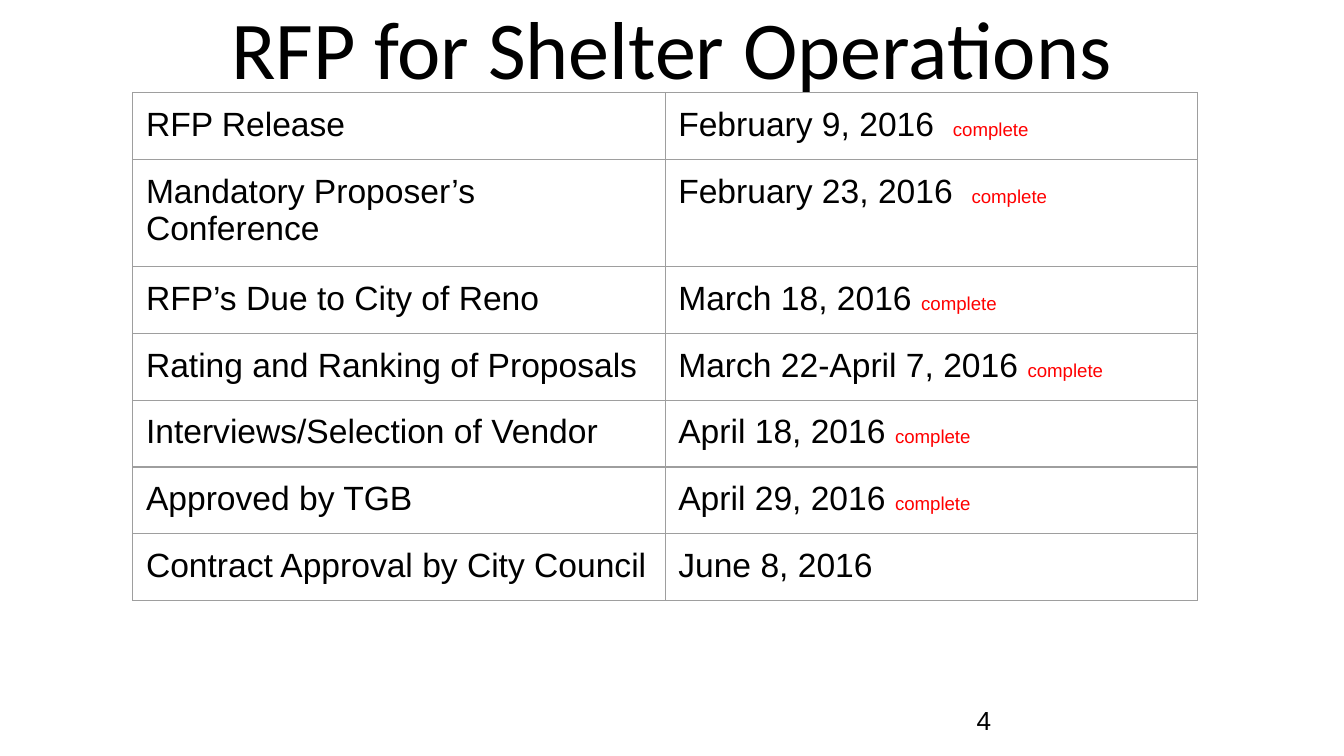
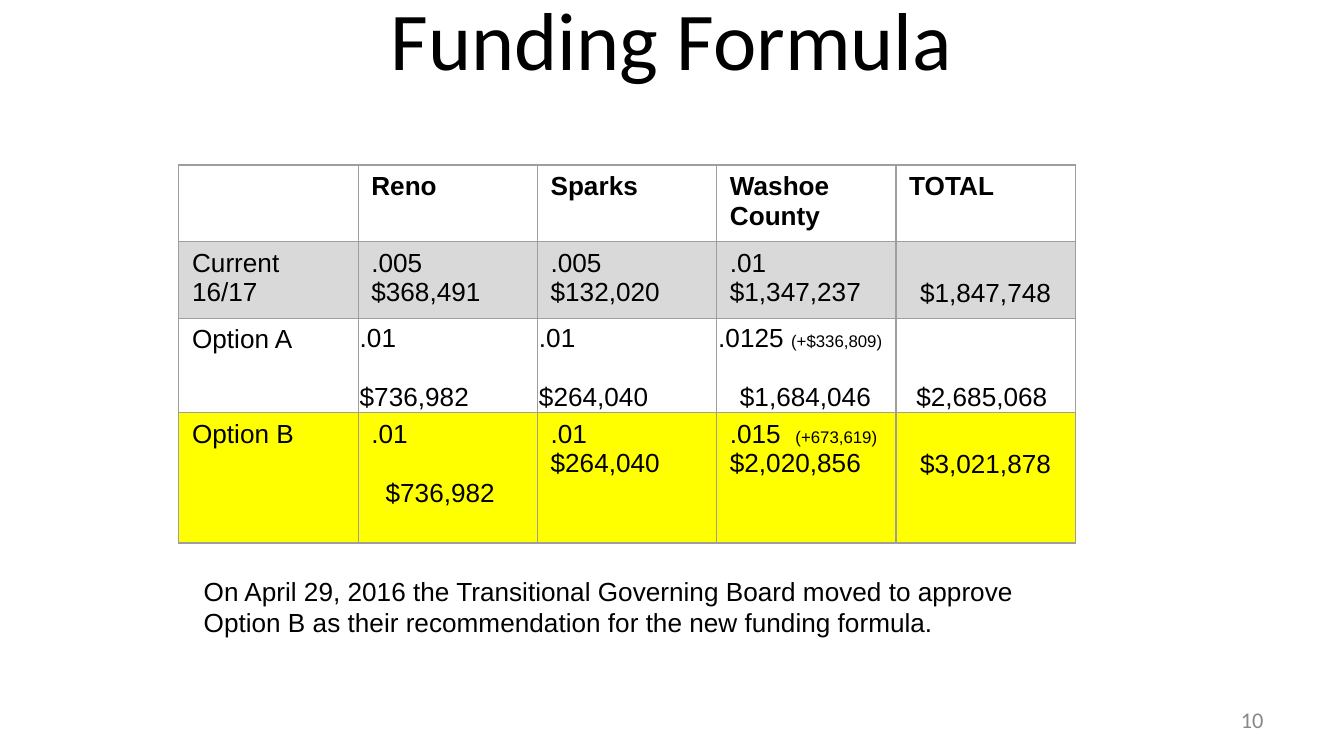
from dataclasses import dataclass

from lxml.etree import SubElement
from pptx import Presentation
from pptx.dml.color import RGBColor
from pptx.enum.text import MSO_ANCHOR, PP_ALIGN
from pptx.oxml import parse_xml
from pptx.oxml.ns import nsdecls, qn
from pptx.util import Cm, Pt


@dataclass(frozen=True)
class Theme:
    heading_font: str = "Calibri"
    body_font: str = "Arial"
    ink: str = "000000"
    muted: str = "888888"
    done: str = "FF0000"
    rule: str = "9E9E9E"
    current: str = "D9D9D9"
    chosen: str = "FFFF00"
    title: int = 44
    schedule: int = 18
    body: int = 14
    number: int = 12
    status: int = 10
    increase: int = 9
    rule_width: float = 0.75


@dataclass(frozen=True)
class Box:
    left: float
    top: float
    width: float
    height: float

    def lengths(self):
        return [Cm(v) for v in (self.left, self.top, self.width, self.height)]


@dataclass(frozen=True)
class Run:
    text: str
    size: int
    font: str
    color: str
    bold: bool = False


@dataclass(frozen=True)
class Line:
    runs: list
    align: PP_ALIGN = PP_ALIGN.LEFT
    before: float = 0
    indent: float = 0


@dataclass(frozen=True)
class Entry:
    """Content of one table cell; margins run left, top, right, bottom."""
    lines: list
    margins: tuple = (0.25, 0.13, 0.25, 0.13)
    anchor: MSO_ANCHOR = MSO_ANCHOR.TOP


THEME = Theme()
WIDE_MARGINS = (0.25,) * 4
TIGHT_MARGINS = (0.03, 0.03, 0.03, 0)
SECOND_LINE_MARGINS = (0.25, 0.7, 0.25, 0.13)
SKIPPED_LINE = 16


def body_run(text, size=THEME.body, color=THEME.ink, bold=False):
    return Run(text, size, THEME.body_font, color, bold)


def write_lines(frame, lines):
    for index, line in enumerate(lines):
        paragraph = frame.paragraphs[0] if index == 0 else frame.add_paragraph()
        paragraph.alignment = line.align
        if line.before:
            paragraph.space_before = Pt(line.before)
        if line.indent:
            paragraph._p.get_or_add_pPr().set("marL", str(Cm(line.indent)))
        for part in line.runs:
            run = paragraph.add_run()
            run.text = part.text
            run.font.name = part.font
            run.font.size = Pt(part.size)
            run.font.bold = part.bold
            run.font.color.rgb = RGBColor.from_string(part.color)


def add_text(slide, box, lines, anchor=MSO_ANCHOR.TOP, inset=0.13):
    frame = slide.shapes.add_textbox(*box.lengths()).text_frame
    frame.word_wrap = True
    frame.vertical_anchor = anchor
    frame.margin_left = frame.margin_right = Cm(0.25)
    frame.margin_top = frame.margin_bottom = Cm(inset)
    write_lines(frame, lines)


def add_title(slide, box, text):
    run = Run(text, THEME.title, THEME.heading_font, THEME.ink)
    add_text(slide, box, [Line([run], PP_ALIGN.CENTER)], MSO_ANCHOR.MIDDLE, 0.25)


def add_page_number(slide, run, align):
    box = Box(18.21, 13.23, 5.92, 0.76)
    add_text(slide, box, [Line([run], align)], MSO_ANCHOR.MIDDLE)


def draw_borders(cell):
    properties = cell._tc.get_or_add_tcPr()
    for index, side in enumerate(("lnL", "lnR", "lnT", "lnB")):
        border = parse_xml(f'<a:{side} {nsdecls("a")} w="{Pt(THEME.rule_width)}"/>')
        fill = SubElement(border, qn("a:solidFill"))
        SubElement(fill, qn("a:srgbClr")).set("val", THEME.rule)
        properties.insert(index, border)


def add_grid(slide, box, rows, heights, fills):
    """Table with equal columns, ruled on every side."""
    count = len(rows[0])
    table = slide.shapes.add_table(len(rows), count, *box.lengths()).table
    table.first_row = table.horz_banding = False
    for column in table.columns:
        column.width = Cm(box.width / count)
    for r, (entries, height, fill) in enumerate(zip(rows, heights, fills)):
        table.rows[r].height = Cm(height)
        for c, entry in enumerate(entries):
            cell = table.cell(r, c)
            if fill:
                cell.fill.solid()
                cell.fill.fore_color.rgb = RGBColor.from_string(fill)
            else:
                cell.fill.background()
            draw_borders(cell)
            (cell.margin_left, cell.margin_top,
             cell.margin_right, cell.margin_bottom) = map(Cm, entry.margins)
            cell.vertical_anchor = entry.anchor
            write_lines(cell.text_frame, entry.lines)


# Schedule of the request for proposals
MILESTONES = [
    ("RFP Release", "February 9, 2016  ", True),
    ("Mandatory Proposer’s Conference", "February 23, 2016  ", True),
    ("RFP’s Due to City of Reno", "March 18, 2016 ", True),
    ("Rating and Ranking of Proposals", "March 22-April 7, 2016 ", True),
    ("Interviews/Selection of Vendor", "April 18, 2016 ", True),
    ("Approved by TGB", "April 29, 2016 ", True),
    ("Contract Approval by City Council", "June 8, 2016", False),
]


def schedule_table(slide, box):
    rows = []
    for step, date, complete in MILESTONES:
        when = [body_run(date, THEME.schedule)]
        if complete:
            when.append(body_run("complete", THEME.status, THEME.done))
        rows.append([
            Entry([Line([body_run(step, THEME.schedule)])], WIDE_MARGINS),
            Entry([Line(when)], WIDE_MARGINS),
        ])
    count = len(rows)
    add_grid(slide, box, rows, [box.height / count] * count, [None] * count)


# Funding formula by jurisdiction
def label(text, bold=False):
    return Entry([Line([body_run(text, bold=bold)])] if text else [])


def share(rate, amount, increase=None, before=0, indent=0, **placing):
    rate_runs = [body_run(rate)]
    if increase:
        rate_runs.append(body_run(increase, THEME.increase))
    amount_line = Line([body_run(amount)], before=before, indent=indent)
    return Entry([Line(rate_runs), amount_line], **placing)


def low_share(rate, amount, increase=None, indent=0):
    return share(rate, amount, increase, SKIPPED_LINE, indent,
                 margins=TIGHT_MARGINS, anchor=MSO_ANCHOR.BOTTOM)


def total(amount, margins=SECOND_LINE_MARGINS, anchor=MSO_ANCHOR.TOP):
    return Entry([Line([body_run(amount)], PP_ALIGN.CENTER)], margins, anchor)


def funding_table(slide, box):
    header = ["", "Reno", "Sparks", "Washoe County", "TOTAL"]
    rows = [
        [label(name, bold=True) for name in header],
        [label("Current 16/17"), share(".005", "$368,491"),
         share(".005", "$132,020"), share(".01", "$1,347,237"),
         total("$1,847,748")],
        [label("Option A"), low_share(".01", "$736,982"),
         low_share(".01", "$264,040"),
         low_share(".0125 ", "$1,684,046", "(+$336,809)", indent=0.41),
         total("$2,685,068 ", TIGHT_MARGINS, MSO_ANCHOR.BOTTOM)],
        [label("Option B"),
         share(".01", "$736,982", before=SKIPPED_LINE, indent=0.27),
         share(".01", "$264,040"),
         share(".015  ", "$2,020,856", "(+673,619)"),
         total("$3,021,878")],
    ]
    add_grid(slide, box, rows, [1.36, 1.36, 1.7, 2.47],
             [None, THEME.current, None, THEME.chosen])


def schedule_slide(slide):
    add_title(slide, Box(1.27, 0, 22.86, 1.75), "RFP for Shelter Operations")
    add_page_number(slide, body_run("4"), PP_ALIGN.LEFT)
    schedule_table(slide, Box(2.51, 1.75, 20.12, 8.54))


def funding_slide(slide):
    add_title(slide, Box(1.27, 0, 22.86, 1.42), "Funding Formula")
    number = Run("10", THEME.number, THEME.heading_font, THEME.muted)
    add_page_number(slide, number, PP_ALIGN.RIGHT)
    funding_table(slide, Box(3.38, 3.12, 16.94, 6.89))
    # Board decision
    decision = ("On April 29, 2016 the Transitional Governing Board moved to "
                "approve Option B as their recommendation for the new funding "
                "formula.")
    add_text(slide, Box(3.6, 10.74, 17.15, 1.45), [Line([body_run(decision)])])


def main():
    deck = Presentation()
    deck.slide_width, deck.slide_height = Cm(25.4), Cm(14.29)
    for build in (schedule_slide, funding_slide):
        build(deck.slides.add_slide(deck.slide_layouts[6]))
    deck.save("out.pptx")


if __name__ == "__main__":
    main()
